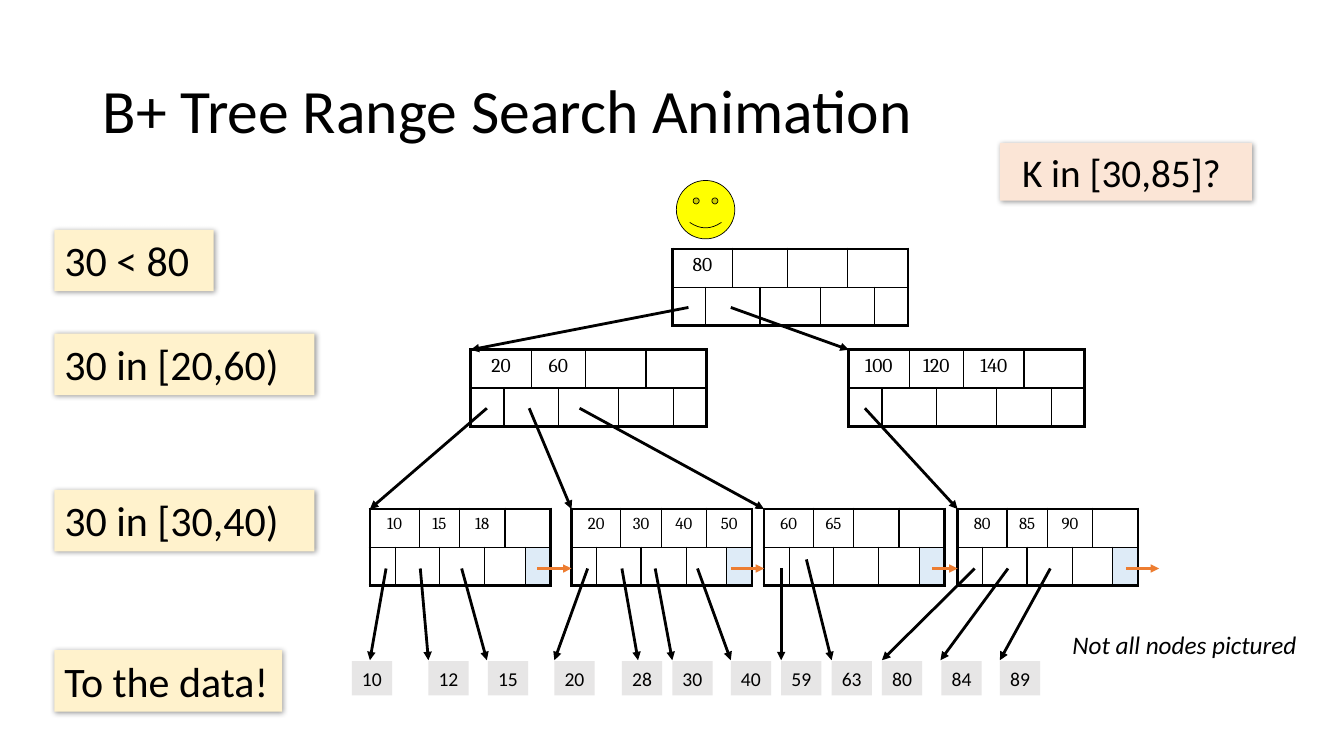
from lxml.etree import SubElement
from pptx import Presentation
from pptx.dml.color import RGBColor
from pptx.enum.shapes import MSO_CONNECTOR as Connector, MSO_SHAPE as Shape
from pptx.enum.text import MSO_ANCHOR as Anchor, MSO_AUTO_SIZE as Fit, PP_ALIGN as Align
from pptx.oxml.ns import qn
from pptx.util import Emu, Pt

COLORS = {
    "ink": "000000", "link": "ED7D31", "next": "DEEBF7", "data": "E7E6E6",
    "query": "FBE5D6", "step": "FFF2CC", "smiley": "FFFF00",
}
EMU_PER_PX = 9144
KEY_SPANS = [(0, 1), (2, 3), (4, 5), (6, 7)]
POINTER_SPANS = [(0, 0), (1, 2), (3, 4), (5, 6), (7, 7)]
INNER = {"columns": [33, 27, 27, 27, 33, 27, 27, 33], "size": 14}
LEAF = {"columns": [25, 20, 20, 20, 25, 20, 20, 25], "size": 12, "next_fill": "next"}
ROW = 38


def px(length):
    return Emu(length * EMU_PER_PX)


def color(name):
    return RGBColor.from_string(COLORS[name])


def assign(target, values):
    for name, value in values.items():
        setattr(target, name, value)


class TreeSlide:
    """Draws styled B+ tree elements on one slide."""

    def __init__(self, deck):
        self.slide = deck.slides.add_slide(deck.slide_layouts[5])
        self.shapes = self.slide.shapes
        self.font = "Calibri"
        self.key_font = "Cambria"

    def label(self, frame, words, size, align=Align.LEFT, font=None, italic=False, **spacing):
        paragraph = frame.paragraphs[0]
        assign(paragraph, {"alignment": align, **spacing})
        run = paragraph.add_run()
        run.text = words
        assign(run.font, {"name": font or self.font, "size": Pt(size), "italic": italic})
        run.font.color.rgb = color("ink")

    def title(self, words, left, top, width, height):
        heading = self.shapes.title
        assign(heading, {"left": px(left), "top": px(top),
                         "width": px(width), "height": px(height)})
        heading.text_frame.vertical_anchor = Anchor.MIDDLE
        self.label(heading.text_frame, words, 44, line_spacing=0.9)

    def border(self, cell, side, weight):
        edge = SubElement(cell._tc.get_or_add_tcPr(), qn(f"a:ln{side}"), w=str(Pt(weight)))
        fill = SubElement(edge, qn("a:solidFill"))
        SubElement(fill, qn("a:srgbClr"), val=COLORS["ink"])

    def node(self, left, top, keys, columns, size, next_fill=None):
        frame = self.shapes.add_table(2, len(columns), px(left), px(top),
                                      px(sum(columns)), px(2 * ROW))
        table = frame.table
        assign(table, {"first_row": False, "horz_banding": False})
        for column, width in zip(table.columns, columns):
            column.width = px(width)
        for row, spans in enumerate((KEY_SPANS, POINTER_SPANS)):
            table.rows[row].height = px(ROW)
            for first, last in spans:
                weights = {"L": 2.25 if first == 0 else 1,
                           "R": 2.25 if last == 7 else 1,
                           "T": 2.25 if row == 0 else 1,
                           "B": 2.25 if row == 1 else 1}
                for position in range(first, last + 1):
                    cell = table.cell(row, position)
                    assign(cell, {"margin_top": px(5), "margin_bottom": 0})
                    for side, weight in weights.items():
                        if side != "L" or position == first:
                            self.border(cell, side, weight)
                    cell.fill.background()
                if last > first:
                    table.cell(row, first).merge(table.cell(row, last))
        for (first, _), key in zip(KEY_SPANS, keys):
            self.label(table.cell(0, first).text_frame, key, size, Align.CENTER,
                       self.key_font, space_before=Pt(size * 0.2))
        if next_fill:
            pointer = table.cell(1, 7)
            pointer.fill.solid()
            pointer.fill.fore_color.rgb = color(next_fill)

    def arrow(self, x1, y1, x2, y2, ink="ink"):
        pointer = self.shapes.add_connector(Connector.STRAIGHT, px(x1), px(y1), px(x2), px(y2))
        pointer.line.color.rgb = color(ink)
        pointer.line.width = Pt(2)
        SubElement(pointer.line._get_or_add_ln(), qn("a:tailEnd"), type="triangle")
        SubElement(pointer._element.spPr, qn("a:effectLst"))

    def shape(self, kind, left, top, width, height, fill):
        figure = self.shapes.add_shape(kind, px(left), px(top), px(width), px(height))
        figure.shadow.inherit = False
        figure.fill.solid()
        figure.fill.fore_color.rgb = color(fill)
        figure.line.fill.background()
        return figure

    def data(self, value, left):
        record = self.shape(Shape.RECTANGLE, left, 656, 40, 34, "data")
        assign(record.text_frame, {"vertical_anchor": Anchor.MIDDLE, "word_wrap": False,
                                   "auto_size": Fit.SHAPE_TO_FIT_TEXT})
        self.label(record.text_frame, value, 14, Align.CENTER)

    def callout(self, words, left, top, width, height, fill, size, align=Align.LEFT):
        callout = self.shape(Shape.RECTANGLE, left, top, width, height, fill)
        effects = callout._element.spPr.find(qn("a:effectLst"))
        shadow = SubElement(effects, qn("a:outerShdw"), blurRad=str(Pt(4)), dist=str(Pt(1)),
                            dir="2700000", algn="tl", rotWithShape="0")
        tint = SubElement(shadow, qn("a:srgbClr"), val=COLORS["ink"])
        SubElement(tint, qn("a:alpha"), val="40000")
        assign(callout.text_frame, {"vertical_anchor": Anchor.TOP, "word_wrap": True,
                                    "auto_size": Fit.SHAPE_TO_FIT_TEXT})
        self.label(callout.text_frame, words, size, align)

    def remark(self, words, left, top, width, height):
        remark = self.shapes.add_textbox(px(left), px(top), px(width), px(height))
        assign(remark.text_frame, {"word_wrap": False, "auto_size": Fit.SHAPE_TO_FIT_TEXT})
        self.label(remark.text_frame, words, 18, italic=True)

    def smiley(self, left, top, size):
        face = self.shape(Shape.SMILEY_FACE, left, top, size, size, "smiley")
        face.line.color.rgb = color("ink")
        face.line.width = Pt(0.5)


def main():
    deck = Presentation()
    assign(deck, {"slide_width": Emu(12192000), "slide_height": px(750)})
    tree = TreeSlide(deck)
    tree.title("B+ Tree Range Search Animation", 92, 40, 1150, 145)

    for left, top, keys in [(667, 247, ["80"]), (467, 347, ["20", "60"]),
                            (842, 347, ["100", "120", "140"])]:
        tree.node(left, top, keys, **INNER)
    for left, keys in [(367, ["10", "15", "18"]), (567, ["20", "30", "40", "50"]),
                       (758, ["60", "65"]), (950, ["80", "85", "90"])]:
        tree.node(left, 505, keys, **LEAF)

    for start, child in [(683, 467), (725, 842)]:
        tree.arrow(start, 305, child, 347)
    for start, leaf in [(483, 367), (525, 567), (575, 758), (858, 950)]:
        tree.arrow(start, 405, leaf, 505)
    for start, neighbor in [(533, 567), (725, 758), (925, 950), (1117, 1150)]:
        tree.arrow(start, 564, neighbor, 564, "link")

    records = [
        ("10", 349, 383, 564, 367), ("12", 425, 417, 564, 425), ("15", 484, 458, 564, 483),
        ("20", 550, 583, 564, 550), ("28", 617, 617, 564, 633), ("30", 667, 650, 564, 667),
        ("40", 725, 692, 564, 725), ("59", 775, 775, 564, 775), ("63", 825, 800, 555, 825),
        ("80", 875, 967, 564, 875), ("84", 934, 1000, 564, 933), ("89", 992, 1042, 564, 992),
    ]
    for value, left, start_x, start_y, tip in records:
        tree.data(value, left)
        tree.arrow(start_x, start_y, tip, 655)

    tree.callout("K in [30,85]? ", 992, 142, 250, 57, "query", 28, Align.CENTER)
    for words, top, width in [("30 < 80", 228, 158), ("30 in [20,60)", 331, 258),
                              ("30 in [30,40)", 486, 258), ("To the data!", 645, 226)]:
        tree.callout(words, 54, top, width, 61, "step", 30)
    tree.remark("Not all nodes pictured", 1054, 619, 245, 40)
    tree.smiley(671, 179, 58)
    deck.save("out.pptx")


if __name__ == "__main__":
    main()
